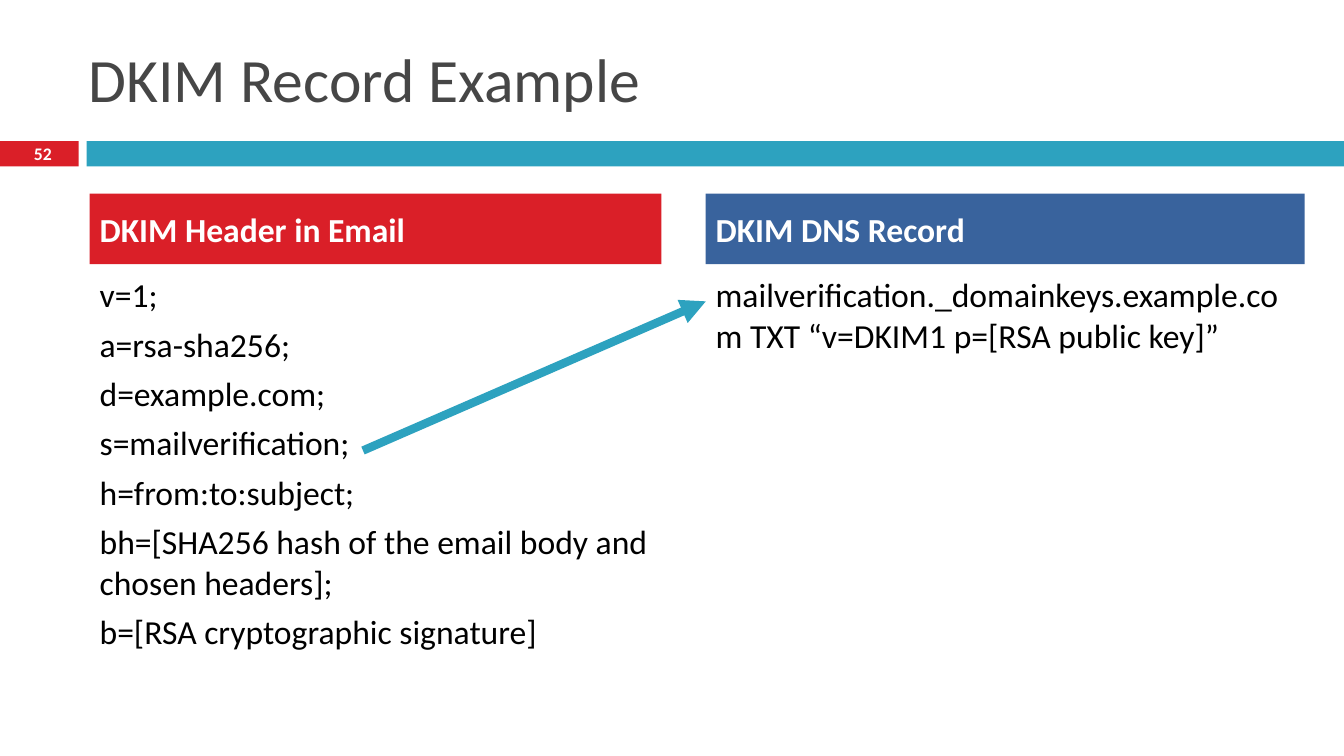
from lxml.etree import SubElement
from pptx import Presentation
from pptx.dml.color import RGBColor
from pptx.enum.shapes import MSO_CONNECTOR, MSO_SHAPE
from pptx.enum.text import MSO_ANCHOR, PP_ALIGN
from pptx.oxml.ns import qn
from pptx.util import Inches, Pt

RED, TEAL, BLUE = "DA1F28", "2DA2BF", "39639D"
WHITE, BLACK, GRAY = "FFFFFF", "000000", "464646"

HEADER_LINES = [
    "v=1;",
    "a=rsa-sha256;",
    "d=example.com;",
    "s=mailverification;",
    "h=from:to:subject;",
    "bh=[SHA256 hash of the email body and chosen headers];",
    "b=[RSA cryptographic signature]",
]
DNS_LINES = ["mailverification._domainkeys.example.com TXT “v=DKIM1 p=[RSA public key]”"]
COLUMNS = [
    (0.89, 5.67, RED, "DKIM Header in Email", HEADER_LINES),
    (7, 5.94, BLUE, "DKIM DNS Record", DNS_LINES),
]


def rgb(color):
    """Turn a hex string into a colour."""
    return RGBColor.from_string(color)


def add_bar(page, left, top, width, height, color):
    """Add a plain filled rectangle."""
    bar = page.shapes.add_shape(
        MSO_SHAPE.RECTANGLE, Inches(left), Inches(top), Inches(width), Inches(height))
    bar.shadow.inherit = False
    bar.fill.solid()
    bar.fill.fore_color.rgb = rgb(color)
    bar.line.fill.background()
    return bar


def write_text(box, lines, size, color, bold=False,
               anchor=MSO_ANCHOR.MIDDLE, align=PP_ALIGN.LEFT):
    """Write one paragraph per line into a shape."""
    frame = box.text_frame
    frame.word_wrap = True
    frame.vertical_anchor = anchor
    frame.text = "\n".join(lines)
    for index, para in enumerate(frame.paragraphs):
        para.alignment = align
        para.space_before = Pt(6.5 if index else 0)
        for span in para.runs:
            span.font.name = "Calibri"
            span.font.size = Pt(size)
            span.font.bold = bold
            span.font.color.rgb = rgb(color)


def add_text(page, left, top, width, height, lines, size, color, **style):
    """Add a text box."""
    box = page.shapes.add_textbox(
        Inches(left), Inches(top), Inches(width), Inches(height))
    write_text(box, lines, size, color, **style)


def add_column(page, left, width, color, heading, lines):
    """Add a coloured heading with its text below."""
    bar = add_bar(page, left, 1.92, width, 0.7, color)
    write_text(bar, [heading], 24, WHITE, bold=True)
    add_text(page, left, 2.67, width, 3.92, lines, 24, BLACK, anchor=MSO_ANCHOR.TOP)


def add_arrow(page, start, end, color, width):
    """Add a straight arrow between two points."""
    arrow = page.shapes.add_connector(
        MSO_CONNECTOR.STRAIGHT, *(Inches(value) for value in start + end))
    arrow.line.color.rgb = rgb(color)
    arrow.line.width = Pt(width)
    SubElement(arrow.line._get_or_add_ln(), qn("a:tailEnd"), type="triangle")
    SubElement(arrow._element.spPr, qn("a:effectLst"))


def main():
    """Build and save the slide."""
    deck = Presentation()
    deck.slide_width, deck.slide_height = Inches(13.33), Inches(7.5)
    page = deck.slides.add_slide(deck.slide_layouts[6])
    add_bar(page, 0, 1.4, 0.78, 0.25, RED)
    add_bar(page, 0.86, 1.4, 12.47, 0.25, TEAL)
    add_text(page, 0.78, 0.3, 11.89, 0.95, ["DKIM Record Example"], 44, GRAY)
    add_text(page, -0.01, 1.38, 0.87, 0.29, ["52"], 12.6, WHITE,
             bold=True, align=PP_ALIGN.CENTER)
    for column in COLUMNS:
        add_column(page, *column)
    add_arrow(page, (3.6, 4.47), (7, 2.99), TEAL, 6)
    deck.save("out.pptx")


if __name__ == "__main__":
    main()
